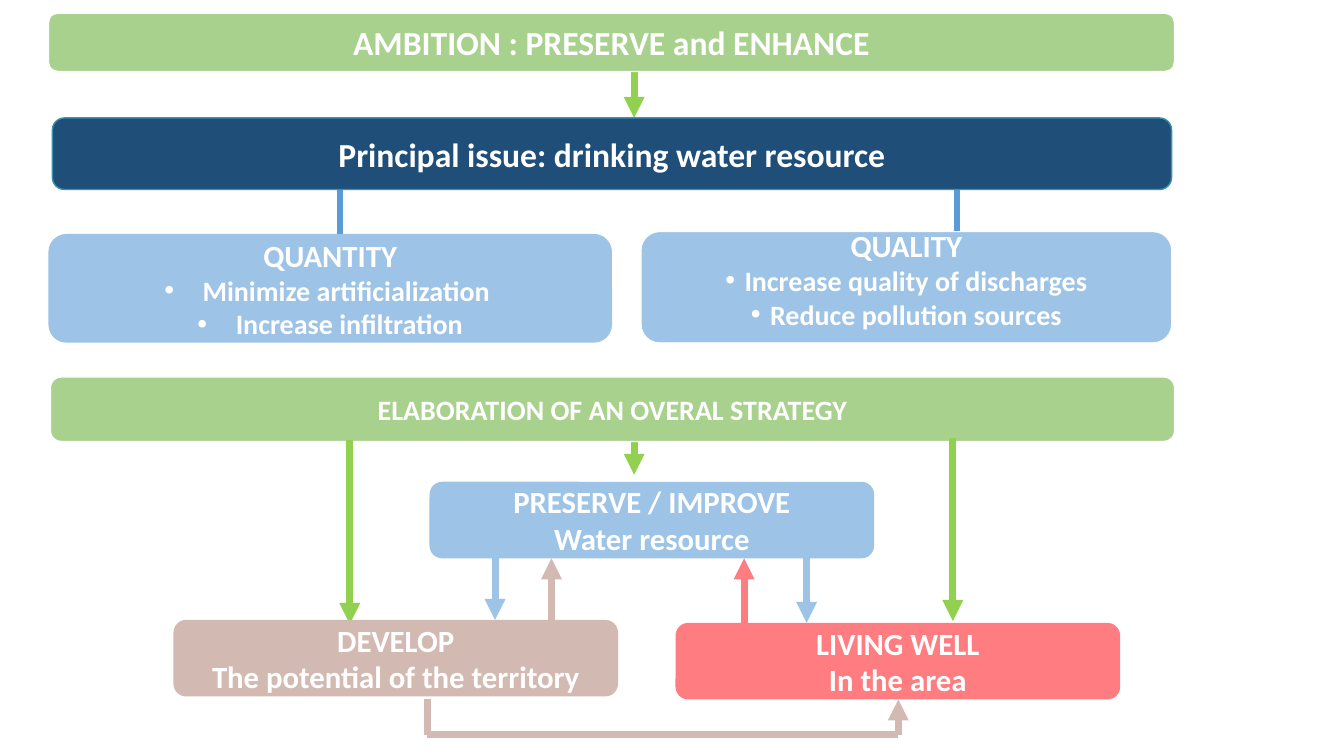
import pptx
import pptx.util
import pptx.dml.color
import pptx.enum.shapes
import pptx.enum.text
import pptx.oxml
from pptx.oxml.ns import qn

Inches, Pt = pptx.util.Inches, pptx.util.Pt

COLORS = {
    "white": "FFFFFF", "green": "A9D18E", "arrow": "92D050",
    "navy": "1F4E79", "teal": "3694AE", "link": "5B9BD5",
    "water": "9DC3E6", "develop": "D2B9B2", "living": "FF7C80",
}


def rgb(name):
    return pptx.dml.color.RGBColor.from_string(COLORS[name])


def add_line(slide, start, end, color, width=5, arrow=True):
    """Straight line, with an arrowhead at its end unless arrow is False."""
    points = [Inches(v) for v in (*start, *end)]
    sp = slide.shapes.add_connector(
        pptx.enum.shapes.MSO_CONNECTOR.STRAIGHT, *points)
    sp.line.color.rgb = rgb(color)
    sp.line.width = Pt(width)
    if arrow:
        pptx.oxml.ns.qn  # namespace helper shared with the bullets
        sp.line._get_or_add_ln().append(
            sp._element.makeelement(qn("a:tailEnd"), {"type": "triangle"}))
    sp._element.spPr.append(sp._element.makeelement(qn("a:effectLst"), {}))


def add_bullet(p, indent):
    pPr = p._p.get_or_add_pPr()
    pPr.set("marL", str(Inches(indent)))
    pPr.set("indent", str(-Inches(indent)))
    for tag, attrs in (("a:buFont", {"typeface": "Arial"}),
                       ("a:buChar", {"char": "•"})):
        pPr.append(pPr.makeelement(qn(tag), attrs))


def add_box(slide, box, fill, lines, line=None, line_width=1,
            indent=None, bottom=0.05):
    """Rounded box; lines are (text, size), bulleted after the first
    when an indent is given."""
    sp = slide.shapes.add_shape(
        pptx.enum.shapes.MSO_SHAPE.ROUNDED_RECTANGLE,
        *[Inches(v) for v in box])
    sp.shadow.inherit = False
    sp.fill.solid()
    sp.fill.fore_color.rgb = rgb(fill)
    if line:
        sp.line.color.rgb = rgb(line)
        sp.line.width = Pt(line_width)
    else:
        sp.line.fill.background()
    tf = sp.text_frame
    frame = {"word_wrap": True, "margin_bottom": Inches(bottom),
             "margin_top": Inches(0.05 if bottom == 0.05 else 0),
             "vertical_anchor": pptx.enum.text.MSO_ANCHOR.MIDDLE}
    for key, value in frame.items():
        setattr(tf, key, value)
    for i, (text, size) in enumerate(lines):
        p = tf.paragraphs[0] if i == 0 else tf.add_paragraph()
        p.alignment = pptx.enum.text.PP_ALIGN.CENTER
        if indent and i:
            add_bullet(p, indent)
        r = p.add_run()
        r.text = text
        for key, value in {"name": "Calibri", "size": Pt(size),
                           "bold": True}.items():
            setattr(r.font, key, value)
        r.font.color.rgb = rgb("white")


def ambition(slide, box):
    """Ambition bar with the arrow leading down to the issue."""
    x, y, w, h = box
    add_line(slide, (x + 5.81, y + 0.38), (x + 5.81, y + 1.04), "arrow")
    add_box(slide, box, "green", [("AMBITION : PRESERVE and ENHANCE", 24)],
            line="white")


def issue(slide, box):
    """Principal issue bar linked to its quantity and quality boxes."""
    x, y, w, h = box
    for dx, top, bottom in ((2.85, 0.61, 1.15), (8.97, 0.59, 1.12)):
        add_line(slide, (x + dx, y + top), (x + dx, y + bottom),
                 "link", width=4, arrow=False)
    add_box(slide, (x - 0.04, y + 1.15, 5.59, 1.08), "water",
            [("QUANTITY", 22), ("Minimize artificialization ", 20),
             ("Increase infiltration", 20)], indent=0.38)
    add_box(slide, (x + 5.84, y + 1.13, 5.26, 1.1), "water",
            [("QUALITY", 22), ("Increase quality of discharges", 20),
             ("Reduce pollution sources", 20)],
            line="white", line_width=0.5, indent=0.19, bottom=0.17)
    add_box(slide, box, "navy",
            [("Principal issue: drinking water resource", 24)], line="teal")


def strategy(slide, box):
    """Overall strategy bar and the arrow to the water resource."""
    x, y, w, h = box
    add_line(slide, (x + 5.79, y + 0.31), (x + 5.79, y + 0.97), "arrow")
    add_box(slide, box, "green", [("ELABORATION OF AN OVERAL STRATEGY", 20)],
            line="white")
    for dx, top, bottom in ((2.97, 0.63, 2.45), (8.95, 0.61, 2.42)):
        add_line(slide, (x + dx, y + top), (x + dx, y + bottom), "arrow")


def goals(slide, box):
    """Three linked goals; box spans them and the loop below."""
    x, y, w, h = box
    bw, bh = 4.41, 0.76
    mid = y + bh            # bottom of the water resource box
    loop = y + h            # level of the loop below

    # Feedback to the water resource, behind the boxes
    for dx, color in ((3.75, "develop"), (5.66, "living")):
        add_line(slide, (x + dx, y + 2.12), (x + dx, mid), color)

    for dx, dy, color, heading, text in (
            (2.54, 0, "water", "PRESERVE / IMPROVE", "Water resource"),
            (0, 1.37, "develop", "DEVELOP", "The potential of the territory"),
            (w - bw, 1.4, "living", "LIVING WELL", "In the area")):
        add_box(slide, (x + dx, y + dy, bw, bh), color,
                [(heading, 22), (text, 22)])

    # From the water resource to both lower goals
    for dx, dy in ((3.19, 1.37), (6.28, 1.4)):
        add_line(slide, (x + dx, mid), (x + dx, y + dy), "water")

    # Loop from develop to living well
    left, right = x + 2.52, x + 7.19
    add_line(slide, (right, loop), (right, y + 2.16), "develop")
    add_line(slide, (left, y + 2.15), (left, loop), "develop", arrow=False)
    add_line(slide, (left, loop), (right, loop), "develop", arrow=False)


def main():
    prs = pptx.Presentation()
    prs.slide_width, prs.slide_height = Inches(13.33), Inches(7.5)
    slide = prs.slides.add_slide(prs.slide_layouts[6])
    ambition(slide, (0.48, 0.13, 11.17, 0.58))
    issue(slide, (0.52, 1.17, 11.1, 0.71))
    strategy(slide, (0.5, 3.74, 11.15, 0.64))
    goals(slide, (1.72, 4.78, 9.39, 2.51))
    prs.save("out.pptx")


if __name__ == "__main__":
    main()
